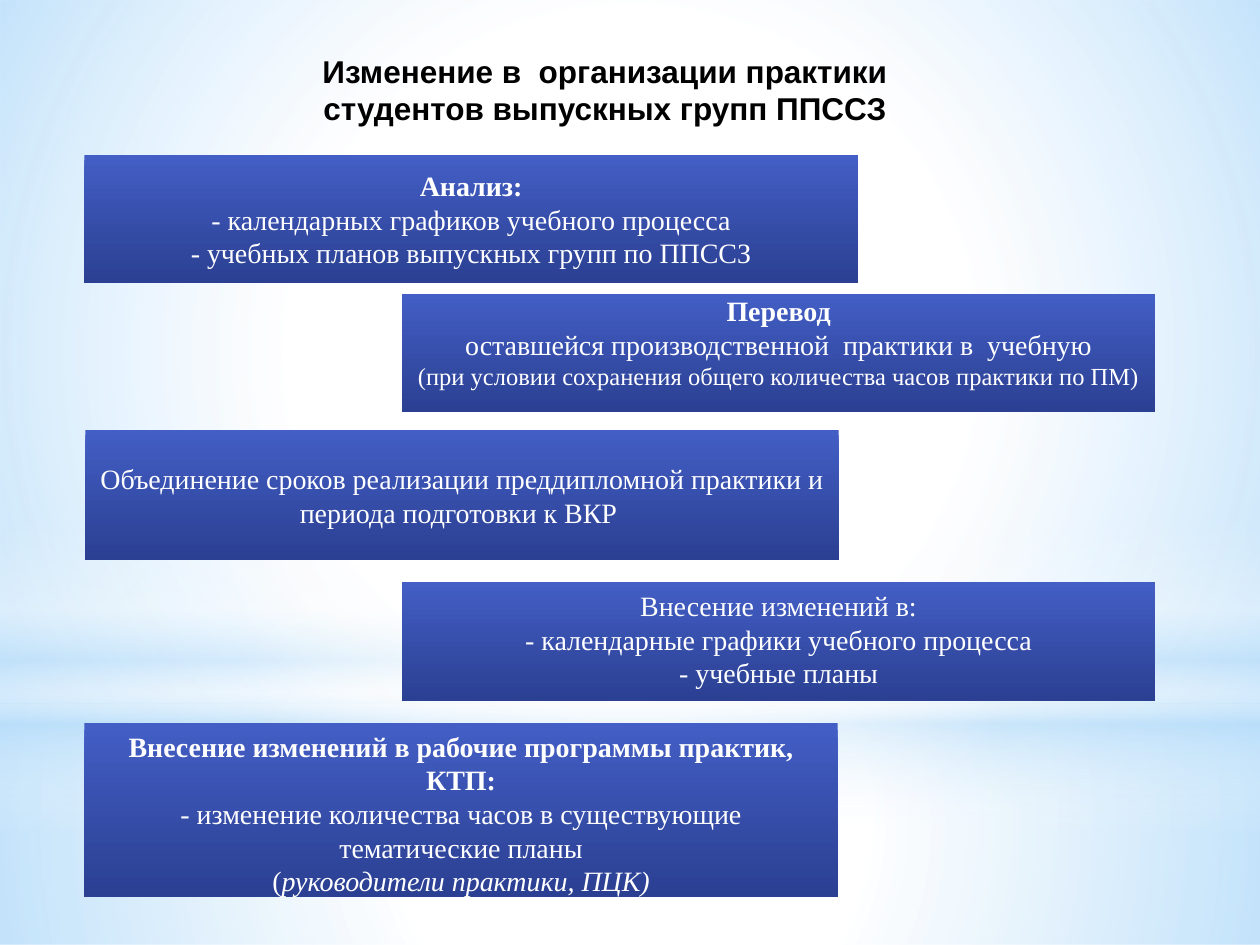
from lxml import etree
from pptx import Presentation
from pptx.dml.color import RGBColor
from pptx.enum.shapes import MSO_SHAPE
from pptx.enum.text import MSO_ANCHOR, PP_ALIGN
from pptx.oxml.ns import qn
from pptx.util import Pt

RECTANGLE, OVAL = MSO_SHAPE.RECTANGLE, MSO_SHAPE.OVAL
TOP, MIDDLE = MSO_ANCHOR.TOP, MSO_ANCHOR.MIDDLE
CENTER = PP_ALIGN.CENTER
COLORS = {"white": "FFFFFF", "sky": "B4DCFA", "black": "000000",
          "blue": "435EC5", "navy": "2B4092"}
SERIF = "Times New Roman"
BOLD, ITALIC, SMALL = {"bold": True}, {"italic": True}, {"size": Pt(14)}

presentation = Presentation()
presentation.slide_width, presentation.slide_height = Pt(720), Pt(540)
slide = presentation.slides.add_slide(presentation.slide_layouts[6])


def add_gradient_shape(kind, box, stops, radial=False):
    """Stops are (position %, colour name, opacity %); linear ones run downwards."""
    shape = slide.shapes.add_shape(kind, *[Pt(value) for value in box])
    shape.shadow.inherit = False
    shape.line.fill.background()
    gradient = etree.Element(qn("a:gradFill"), rotWithShape="1")
    stop_list = etree.SubElement(gradient, qn("a:gsLst"))
    for position, color, opacity in stops:
        stop = etree.SubElement(stop_list, qn("a:gs"), pos=str(position * 1000))
        rgb = etree.SubElement(stop, qn("a:srgbClr"), val=COLORS[color])
        if opacity < 100:
            etree.SubElement(rgb, qn("a:alpha"), val=str(opacity * 1000))
    if radial:
        path = etree.SubElement(gradient, qn("a:path"), path="circle")
        etree.SubElement(path, qn("a:fillToRect"),
                         {side: "50000" for side in "ltrb"})
    else:
        etree.SubElement(gradient, qn("a:lin"), ang="5400000", scaled="0")
    shape._element.spPr.find(qn("a:prstGeom")).addnext(gradient)
    return shape


def write_paragraphs(frame, paragraphs, base_format):
    """Each paragraph is a list of (text, format changes) runs."""
    frame.word_wrap = True
    for index, runs in enumerate(paragraphs):
        paragraph = frame.paragraphs[0] if index == 0 else frame.add_paragraph()
        paragraph.alignment = CENTER
        for text, changes in runs:
            run = paragraph.add_run()
            run.text = text
            values = {**base_format, **changes}
            run.font.color.rgb = RGBColor.from_string(COLORS[values.pop("color")])
            for name, value in values.items():
                setattr(run.font, name, value)


# Sky background
backdrop = [
    (RECTANGLE, (0, 402, 720, 138),
     [(0, "white", 91), (37, "white", 76), (100, "sky", 79)], True),
    (RECTANGLE, (0, 0, 720, 402),
     [(0, "white", 89), (48, "white", 62), (100, "sky", 79)], True),
    (RECTANGLE, (0, 296.5, 720, 180),
     [(0, "white", 0), (29, "white", 30), (45, "sky", 40),
      (55, "white", 26), (65, "sky", 60), (100, "white", 0)], False),
    (OVAL, (0, 126, 720, 402), [(0, "white", 100), (56, "white", 0)], True),
]
for kind, box, stops, radial in backdrop:
    add_gradient_shape(kind, box, stops, radial)

# Title
title = slide.shapes.add_textbox(Pt(48), Pt(26), Pt(595.5), Pt(51))
write_paragraphs(
    title.text_frame,
    [[("Изменение в  организации практики", {})],
     [("студентов выпускных групп ППССЗ", {})]],
    {"name": "Arial", "size": Pt(18), "bold": True, "color": "black"})

# Steps, alternating left and right: box, anchor, bottom inset, paragraphs
LEFT, RIGHT, WIDTH = 48.25, 229.7, 430.5
steps = [
    ((LEFT, 88.5, 442, 73.5), MIDDLE, 3.6, [
        [("Анализ:", BOLD)],
        [("- календарных графиков учебного процесса", {})],
        [("- учебных планов выпускных групп по ППССЗ", {})]]),
    ((RIGHT, 168, WIDTH, 67.75), MIDDLE, 16.3, [
        [("Перевод", BOLD)],
        [("оставшейся производственной  практики в  учебную", {})],
        [("(при условии сохранения общего количества часов практики по ПМ)",
          SMALL)]]),
    ((LEFT + 0.5, 245.5, WIDTH, 74.75), MIDDLE, 3.6, [
        [("Объединение сроков реализации преддипломной практики и "
          "периода подготовки к ВКР ", {})]]),
    ((RIGHT, 332.75, WIDTH, 67.75), TOP, 3.6, [
        [("Внесение изменений в:", {})],
        [("- календарные графики учебного процесса", {})],
        [("- учебные планы", {})]]),
    ((LEFT, 413.25, WIDTH, 99.25), TOP, 3.6, [
        [("Внесение изменений в рабочие программы практик, КТП:", BOLD)],
        [("- изменение количества часов в существующие тематические планы", {})],
        [("(", {}), ("руководители практики, ПЦК)", ITALIC)]]),
]
for box, anchor, bottom_inset, paragraphs in steps:
    step = add_gradient_shape(RECTANGLE, box,
                              [(0, "blue", 100), (100, "navy", 100)])
    step.text_frame.vertical_anchor = anchor
    step.text_frame.margin_bottom = Pt(bottom_inset)
    write_paragraphs(step.text_frame, paragraphs,
                     {"name": SERIF, "size": Pt(16), "color": "white"})

presentation.save("out.pptx")
